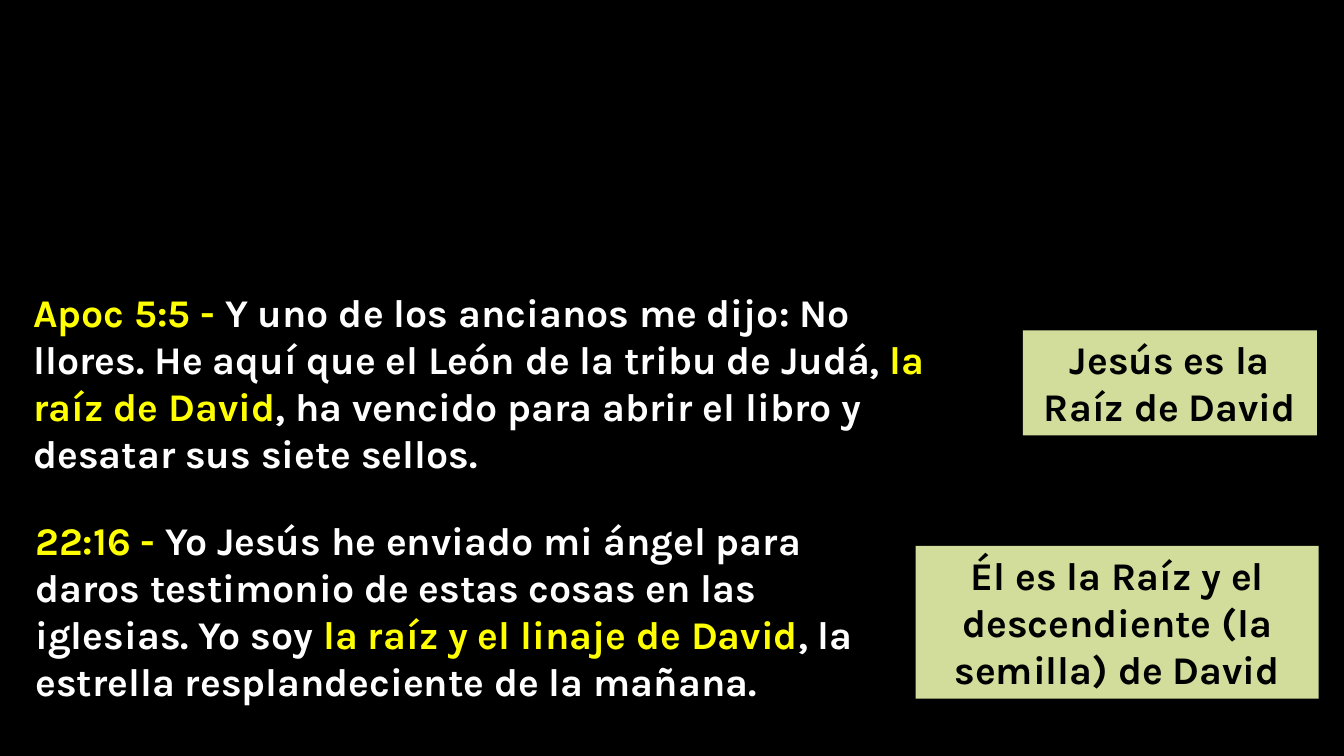
from pptx import Presentation
from pptx.dml.color import RGBColor
from pptx.enum import shapes, text
from pptx.util import Pt

BLACK, WHITE, YELLOW, GREEN = "000000", "FFFFFF", "FFFF00", "D2DD9B"


def paint(fill, color):
    fill.solid()
    fill.fore_color.rgb = RGBColor.from_string(color)


def set_text(box, spans, align):
    """Write (words, color) spans as one bold, wrapped paragraph."""
    frame = box.text_frame
    frame.word_wrap = True
    frame.auto_size = text.MSO_AUTO_SIZE.SHAPE_TO_FIT_TEXT
    para = frame.paragraphs[0]
    para.alignment = align
    para.font.name = "Karla"
    para.font.size = Pt(28)
    para.font.bold = True
    for words, color in spans:
        span = para.add_run()
        span.text = words
        paint(span.font.fill, color)


def add_verse(page, area, spans):
    box = page.shapes.add_textbox(*map(Pt, area))
    set_text(box, spans, text.PP_ALIGN.LEFT)


def add_conclusion(page, area, words):
    box = page.shapes.add_shape(shapes.MSO_SHAPE.RECTANGLE, *map(Pt, area))
    box.shadow.inherit = False
    paint(box.fill, GREEN)
    box.line.fill.background()
    box.text_frame.vertical_anchor = text.MSO_ANCHOR.TOP
    set_text(box, [(words, BLACK)], text.PP_ALIGN.CENTER)


def main():
    deck = Presentation()
    deck.slide_width, deck.slide_height = Pt(960), Pt(540)
    page = deck.slides.add_slide(deck.slide_layouts[6])
    paint(page.background.fill, BLACK)

    add_verse(page, (16.8, 202.5, 666, 143.3), [
        ("Apoc 5:5 - ", YELLOW),
        ("Y uno de los ancianos me dijo: No llores. "
         "He aquí que el León de la tribu de Judá, ", WHITE),
        ("la raíz de David", YELLOW),
        (", ha vencido para abrir el libro y desatar sus siete sellos.", WHITE),
    ])
    add_conclusion(page, (730.7, 236, 210, 75), "Jesús es la Raíz de David")

    add_verse(page, (18.2, 365.2, 635.8, 143.3), [
        ("22:16 - ", YELLOW),
        ("Yo Jesús he enviado mi ángel para daros testimonio "
         "de estas cosas en las iglesias. Yo soy ", WHITE),
        ("la raíz y el linaje de David", YELLOW),
        (", la estrella resplandeciente de la mañana.", WHITE),
    ])
    add_conclusion(page, (654, 390, 288, 109),
                   "Él es la Raíz y el descendiente (la semilla) de David")

    deck.save("out.pptx")


if __name__ == "__main__":
    main()
